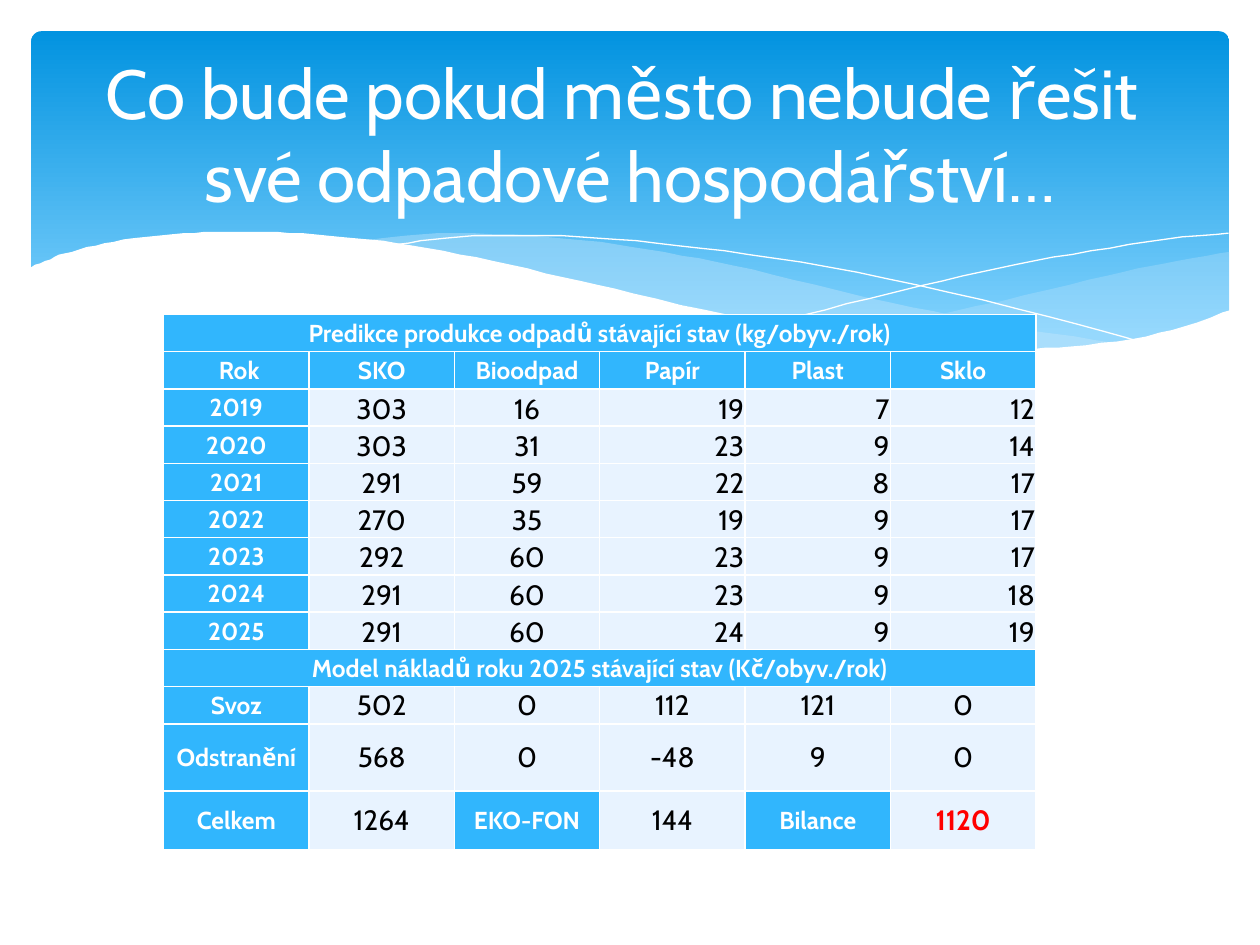
from dataclasses import dataclass
from typing import NamedTuple

from lxml.etree import SubElement
from pptx import Presentation
from pptx.dml.color import RGBColor as Rgb
from pptx.enum.shapes import MSO_SHAPE as Preset
from pptx.enum.text import MSO_ANCHOR as Anchor, MSO_AUTO_SIZE as AutoSize, PP_ALIGN as Align
from pptx.oxml import parse_xml
from pptx.oxml.ns import nsdecls, qn
from pptx.util import Cm, Pt

Point = tuple[float, float]


@dataclass(frozen=True)
class Theme:
    font: str = "Cabin"
    white: str = "FFFFFF"
    black: str = "000000"
    red: str = "FF0000"
    banner_top: str = "0293E0"
    banner_bottom: str = "83D3FE"
    wave: str = "C6E7FC"
    header: str = "31B6FD"
    body: str = "E8F3FF"
    title_size: float = 39.6
    header_size: float = 14
    body_size: float = 16


class Wave(NamedTuple):
    edges: list[list[Point]]  # smooth edges, joined end to end
    fill: str | None = None
    opacity: int = 100


THEME = Theme()
WAVE_UNIT = Cm(0.0254)  # waves are given in hundredths of an inch

WAVES = [
    # Pale swell on the right
    Wave([[(975, 200), (935, 207), (891, 216), (832, 230), (753, 248), (661, 265)],
          [(661, 265), (719, 271), (769, 277), (814, 278), (854, 276), (889, 272),
           (921, 265), (949, 257), (976, 247)], [(976, 200)]], THEME.wave, 29),
    # Pale swell in the middle
    Wave([[(893, 273), (837, 265), (775, 254), (706, 240), (629, 222), (569, 208),
           (514, 198), (465, 191), (420, 187), (361, 185), (313, 188), (286, 191)],
          [(286, 191), (342, 199), (404, 211), (449, 222), (530, 240), (601, 255),
           (665, 266), (722, 274), (773, 277), (818, 278), (857, 277), (893, 273)]],
         THEME.wave, 40),
    # Two hairlines
    Wave([[(309, 195), (344, 190), (387, 187), (433, 187), (489, 190), (556, 197),
           (636, 208), (727, 226), (831, 251), (907, 272)]]),
    Wave([[(613, 257), (672, 241), (748, 223), (806, 210), (866, 199), (924, 190), (975, 185)]]),
    # White front that cuts off the banner
    Wave([[(977, 246), (940, 259), (899, 269), (850, 275), (809, 277), (761, 275),
           (708, 270), (648, 262), (579, 250), (503, 233), (447, 220), (391, 207),
           (340, 197), (292, 190), (250, 186), (211, 184), (177, 184), (146, 185),
           (106, 189), (76, 195), (52, 201), (36, 207), (23, 213)],
          [(23, 329)], [(977, 329)]], THEME.white),
]

TITLE = "Co bude pokud město nebude řešit \vsvé odpadové hospodářství…"
ROWS = [
    ["Predikce produkce odpadů stávající stav (kg/obyv./rok)"],
    [" Rok", "SKO", "Bioodpad", "Papír", "Plast", "Sklo"],
    ["2019", "303", "16", "19", "7", "12"],
    ["2020", "303", "31", "23", "9", "14"],
    ["2021", "291", "59", "22", "8", "17"],
    ["2022", "270", "35", "19", "9", "17"],
    ["2023", "292", "60", "23", "9", "17"],
    ["2024", "291", "60", "23", "9", "18"],
    ["2025", "291", "60", "24", "9", "19"],
    ["Model nákladů roku 2025 stávající stav (Kč/obyv./rok)"],
    ["Svoz", "502", "0", "112", "121", "0"],
    ["Odstranění", "568", "0", "-48", "9", "0"],
    ["Celkem", "1264", "EKO-FON", "144", "Bilance", "1120"],
]
COLUMN_COUNT = 6
COLUMN_WIDTH = Cm(2.93)
ROW_HEIGHTS = [Cm(0.75)] * 11 + [Cm(1.36), Cm(1.17)]
YEAR_ROWS = range(2, 9)


def smooth(knots: list[Point], steps: int = 4) -> list[Point]:
    """Run a Catmull-Rom curve through the knots."""
    padded = [knots[0], *knots, knots[-1]]
    points = [knots[0]]
    for a, b, c, d in zip(padded, padded[1:], padded[2:], padded[3:]):
        for step in range(1, steps + 1):
            t = step / steps
            x, y = (
                q + t / 2 * (r - p + t * (2 * p - 5 * q + 4 * r - s + t * (3 * (q - r) + s - p)))
                for p, q, r, s in zip(a, b, c, d)
            )
            points.append((x, y))
    return points


def draw_banner(slide) -> None:
    banner = slide.shapes.add_shape(
        Preset.ROUNDED_RECTANGLE, Cm(0.63), Cm(0.63), Cm(24.15), Cm(6.86))
    banner.adjustments[0] = 0.03
    banner.shadow.inherit = False
    banner.line.fill.background()
    banner.fill.gradient()
    banner.fill.gradient_angle = 270
    stops = zip(banner.fill.gradient_stops, (0, 0.9), (THEME.banner_top, THEME.banner_bottom))
    for stop, position, color in stops:
        stop.position = position
        stop.color.rgb = Rgb.from_string(color)


def draw_wave(slide, wave: Wave) -> None:
    points = [point for edge in wave.edges for point in smooth(edge)]
    builder = slide.shapes.build_freeform(*points[0], scale=WAVE_UNIT)
    builder.add_line_segments(points[1:], close=wave.fill is not None)
    shape = builder.convert_to_shape()
    shape.shadow.inherit = False
    if wave.fill is None:
        shape.fill.background()
        shape.line.color.rgb = Rgb.from_string(THEME.white)
        shape.line.width = Pt(0)
        return
    shape.line.fill.background()
    shape.fill.solid()
    shape.fill.fore_color.rgb = Rgb.from_string(wave.fill)
    if wave.opacity < 100:
        color = shape.element.spPr.find(qn("a:solidFill"))[0]
        SubElement(color, qn("a:alpha"), val=str(wave.opacity * 1000))


def write_title(slide) -> None:
    title = slide.shapes.title
    title.left, title.top, title.width, title.height = Cm(1.27), Cm(0.94), Cm(22.86), Cm(3.48)
    frame = title.text_frame
    frame.text = TITLE
    frame.word_wrap = True
    frame.auto_size = AutoSize.NONE
    frame.vertical_anchor = Anchor.MIDDLE
    paragraph = frame.paragraphs[0]
    paragraph.alignment = Align.CENTER
    set_font(paragraph.font, THEME.title_size, THEME.white, False)
    slide.shapes.element.append(title.element)  # in front of the banner


def set_font(font, size: float, color: str, bold: bool) -> None:
    font.name, font.size, font.bold = THEME.font, Pt(size), bold
    font.color.rgb = Rgb.from_string(color)


def add_borders(cell) -> None:
    properties = cell._tc.get_or_add_tcPr()
    for index, side in enumerate(("lnL", "lnR", "lnT", "lnB")):
        properties.insert(index, parse_xml(
            f'<a:{side} {nsdecls("a")} w="{Pt(1)}"><a:solidFill>'
            f'<a:srgbClr val="{THEME.white}"/></a:solidFill></a:{side}>'))


def fill_cell(cell, text: str, row: int, column: int) -> None:
    is_header = column == 0 or not text.lstrip("-").isdigit()
    is_balance = (row, column) == (len(ROWS) - 1, COLUMN_COUNT - 1)
    is_year_value = row in YEAR_ROWS and column > 0
    cell.fill.solid()
    cell.fill.fore_color.rgb = Rgb.from_string(THEME.header if is_header else THEME.body)
    cell.margin_left = cell.margin_right = cell.margin_top = Cm(0.02)
    cell.margin_bottom = 0
    cell.vertical_anchor = Anchor.BOTTOM if is_year_value else Anchor.MIDDLE
    cell.text = text
    paragraph = cell.text_frame.paragraphs[0]
    paragraph.alignment = Align.RIGHT if is_year_value and column > 2 else Align.CENTER
    if is_header:
        set_font(paragraph.font, THEME.header_size, THEME.white, True)
    else:
        color = THEME.red if is_balance else THEME.black
        set_font(paragraph.font, THEME.body_size, color, is_balance)


def draw_table(slide) -> None:
    table = slide.shapes.add_table(
        len(ROWS), COLUMN_COUNT, Cm(3.3), Cm(6.34),
        COLUMN_WIDTH * COLUMN_COUNT, sum(ROW_HEIGHTS)).table
    table.first_row = table.horz_banding = False
    for column in table.columns:
        column.width = COLUMN_WIDTH
    for row, (texts, height) in enumerate(zip(ROWS, ROW_HEIGHTS)):
        table.rows[row].height = height
        if len(texts) == 1:
            table.cell(row, 0).merge(table.cell(row, COLUMN_COUNT - 1))
        for column, text in enumerate(texts):
            fill_cell(table.cell(row, column), text, row, column)
        for column in range(COLUMN_COUNT):
            add_borders(table.cell(row, column))


def main() -> None:
    presentation = Presentation()
    presentation.slide_width, presentation.slide_height = Cm(25.4), Cm(19.05)
    slide = presentation.slides.add_slide(presentation.slide_layouts[5])
    draw_banner(slide)
    for wave in WAVES:
        draw_wave(slide, wave)
    write_title(slide)
    draw_table(slide)
    presentation.save("out.pptx")


if __name__ == "__main__":
    main()
